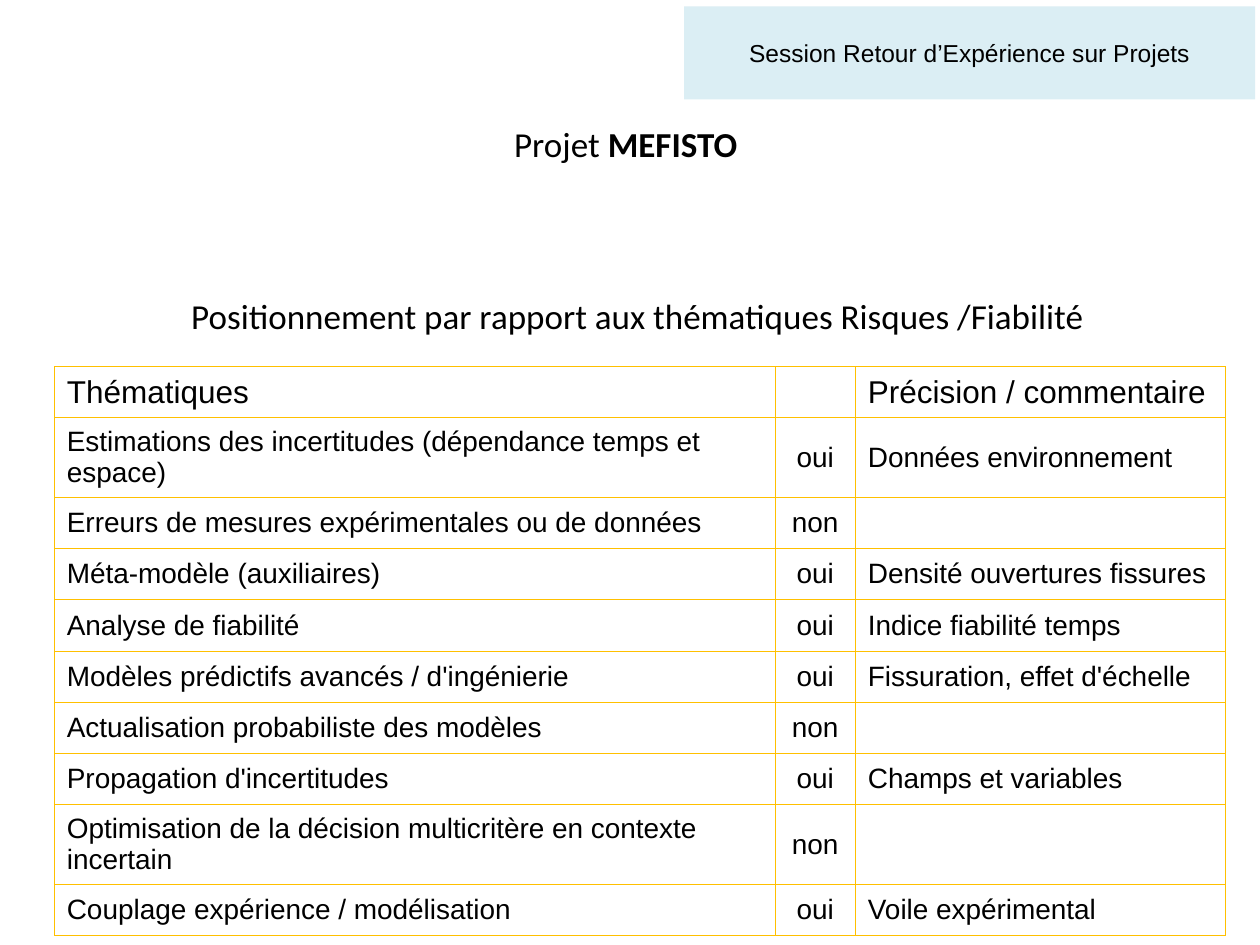
from lxml.etree import SubElement
from pptx import Presentation
from pptx.dml.color import RGBColor
from pptx.enum.shapes import MSO_SHAPE
from pptx.enum.text import MSO_ANCHOR, MSO_AUTO_SIZE, PP_ALIGN
from pptx.oxml.ns import qn
from pptx.util import Pt

BLACK = RGBColor(0x00, 0x00, 0x00)
PALE_BLUE = RGBColor(0xDB, 0xEE, 0xF4)
AMBER = RGBColor(0xFF, 0xC0, 0x00)

# Content
SESSION = "Session Retour d’Expérience sur Projets"
PROJECT = [("Projet ", False), ("MEFISTO", True)]
SUBTITLE = "Positionnement par rapport aux thématiques Risques /Fiabilité"
THEMES = [
    ("Thématiques", "", "Précision / commentaire"),
    ("Estimations des incertitudes (dépendance temps et espace)", "oui", "Données environnement"),
    ("Erreurs de mesures expérimentales ou de données", "non", ""),
    ("Méta-modèle (auxiliaires)", "oui", "Densité ouvertures fissures"),
    ("Analyse de fiabilité", "oui", "Indice fiabilité temps"),
    ("Modèles prédictifs avancés / d'ingénierie", "oui", "Fissuration, effet d'échelle"),
    ("Actualisation probabiliste des modèles", "non", ""),
    ("Propagation d'incertitudes", "oui", "Champs et variables"),
    ("Optimisation de la décision multicritère en contexte incertain", "non", ""),
    ("Couplage expérience / modélisation", "oui", "Voile expérimental"),
]
COLUMN_WIDTHS = (411.8, 46, 211.4)
ROW_HEIGHT = 29.23


def write(frame, text, font="Arial", size=16, align=PP_ALIGN.LEFT):
    """Fill a text frame; text is a string or a list of (words, bold) runs."""
    paragraph = frame.paragraphs[0]
    paragraph.alignment = align
    runs = [(text, False)] if isinstance(text, str) else text
    for words, bold in runs:
        run = paragraph.add_run()
        run.text = words
        run.font.name = font
        run.font.size = Pt(size)
        run.font.bold = bold
        run.font.color.rgb = BLACK


def outline(cell, color, width):
    """Draw the four borders of a cell, ahead of its fill."""
    properties = cell._tc.get_or_add_tcPr()
    for position, tag in enumerate(("a:lnL", "a:lnR", "a:lnT", "a:lnB")):
        line = SubElement(properties, qn(tag), w=str(Pt(width)))
        fill = SubElement(line, qn("a:solidFill"))
        SubElement(fill, qn("a:srgbClr"), val=str(color))
        properties.insert(position, line)


presentation = Presentation()
presentation.slide_width, presentation.slide_height = Pt(720), Pt(540)
slide = presentation.slides.add_slide(presentation.slide_layouts[5])

# Session banner
banner = slide.shapes.add_shape(MSO_SHAPE.RECTANGLE, Pt(391), Pt(3.6), Pt(326.2), Pt(53.3))
banner.shadow.inherit = False
banner.fill.solid()
banner.fill.fore_color.rgb = PALE_BLUE
banner.line.fill.background()
banner.text_frame.vertical_anchor = MSO_ANCHOR.MIDDLE
write(banner.text_frame, SESSION, size=14, align=PP_ALIGN.CENTER)

# Project title
title = slide.shapes.title
title.left, title.top, title.width, title.height = Pt(286.6), Pt(66.2), Pt(143.3), Pt(56.9)
title.text_frame.vertical_anchor = MSO_ANCHOR.TOP
title.text_frame.auto_size = MSO_AUTO_SIZE.NONE
write(title.text_frame, PROJECT, font="Calibri", size=20)

# Table heading
subtitle = slide.shapes.add_textbox(Pt(102.2), Pt(164.9), Pt(529.9), Pt(31.7))
subtitle.text_frame.word_wrap = False
write(subtitle.text_frame, SUBTITLE, font="Calibri", size=20)

# Table of themes
table = slide.shapes.add_table(
    len(THEMES), len(COLUMN_WIDTHS), Pt(31), Pt(209.5),
    Pt(sum(COLUMN_WIDTHS)), Pt(ROW_HEIGHT * len(THEMES))).table
table.first_row = table.horz_banding = False
for column, width in zip(table.columns, COLUMN_WIDTHS):
    column.width = Pt(width)
for row_index, theme in enumerate(THEMES):
    table.rows[row_index].height = Pt(ROW_HEIGHT)
    for column_index, text in enumerate(theme):
        cell = table.cell(row_index, column_index)
        cell.vertical_anchor = MSO_ANCHOR.MIDDLE
        cell.fill.background()
        outline(cell, AMBER, 0.5)
        if text:
            write(cell.text_frame, text, size=16 if row_index else 18,
                  align=PP_ALIGN.CENTER if column_index == 1 else PP_ALIGN.LEFT)

presentation.save("out.pptx")
